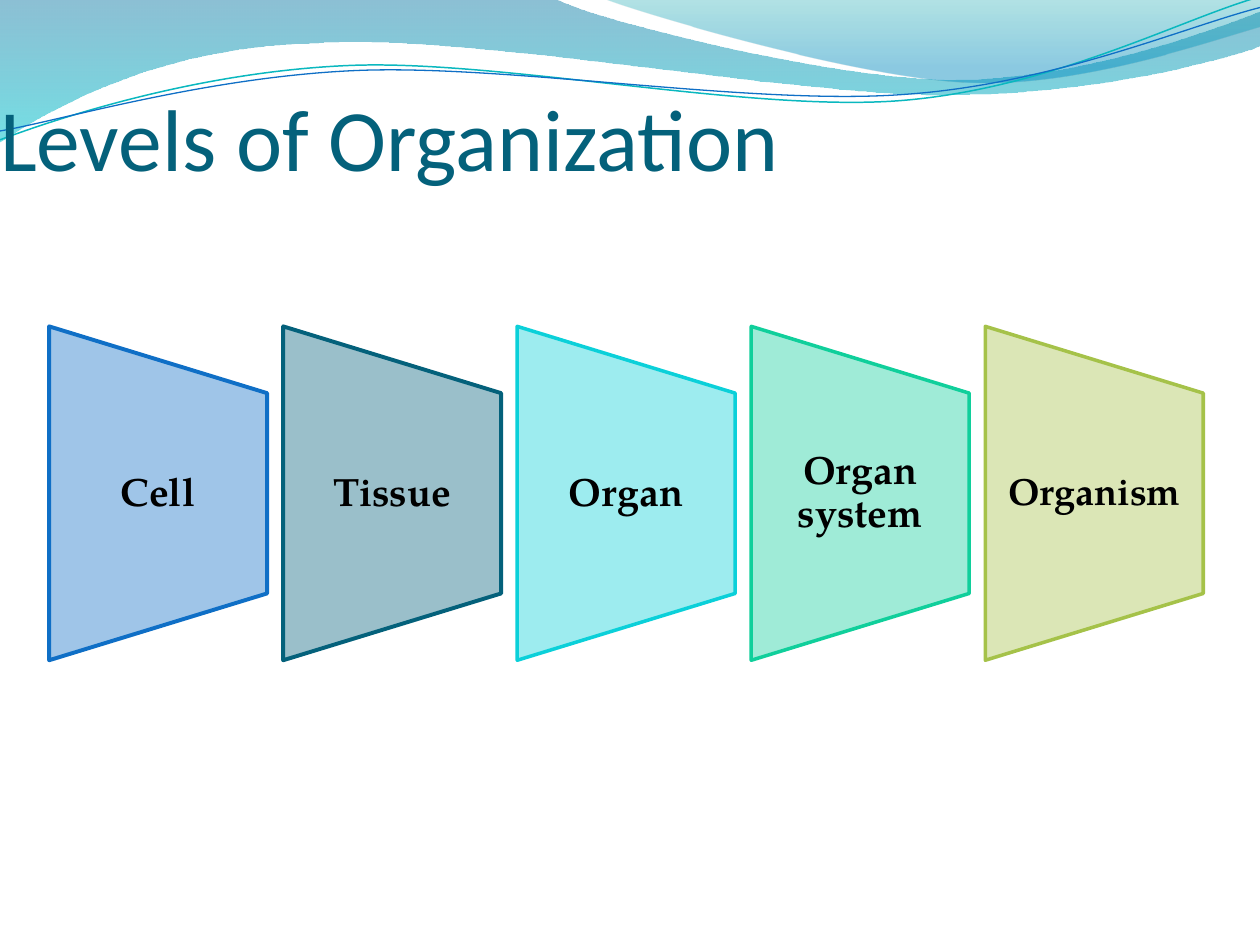
from math import cos, radians, sin

from lxml.etree import SubElement
from pptx import Presentation
from pptx.dml.color import RGBColor
from pptx.enum.text import MSO_ANCHOR, PP_ALIGN
from pptx.oxml.ns import qn
from pptx.util import Inches, Pt

BLACK = RGBColor(0x00, 0x00, 0x00)
BLUE = RGBColor(0x0F, 0x6F, 0xC6)
TEAL = RGBColor(0x04, 0x61, 0x7B)
CYAN = RGBColor(0x0B, 0xD0, 0xD9)
GREEN = RGBColor(0x10, 0xCF, 0x9B)
OLIVE = RGBColor(0xA5, 0xC2, 0x49)
LINE_TEAL = RGBColor(0x0A, 0xB8, 0xBF)
WAVE_BLUE = RGBColor(0x00, 0x74, 0xA1)
WAVE_CYAN = RGBColor(0x00, 0xC6, 0xCF)
CREST_TEAL = RGBColor(0x00, 0xA1, 0xA9)
CREST_BLUE = RGBColor(0x00, 0x8B, 0xBF)

STRAND_TILT = 357.3

MAIN_WAVE = [
    (0, 0), (4.4, -0.01),
    (4.76, 0.17, 6.64, 0.63, 7.58, 0.63),
    (8.53, 0.63, 9.58, 0.26, 10, 0.09),
    (10.01, 0.36),
    (9.83, 0.44, 8.7, 0.76, 7.46, 0.75),
    (6.22, 0.75, 3.82, 0.28, 2.57, 0.34),
    (1.29, 0.36, 0.46, 0.83, -0.01, 1.13),
]
CREST = [
    (4.79, -0.01),
    (5.09, 0.11, 6.82, 0.62, 7.69, 0.65),
    (8.56, 0.69, 9.61, 0.32, 10, 0.21),
    (10, 0),
]
TEAL_STRAND = [
    (0, 1.11),
    (0.48, 0.93, 1.58, 0.57, 2.77, 0.52),
    (3.95, 0.47, 5.93, 0.89, 7.13, 0.8),
    (8.33, 0.71, 9.38, 0.15, 9.98, -0.02),
]
BLUE_STRAND = [
    (0, 1.04),
    (0.47, 0.96, 1.64, 0.61, 2.83, 0.56),
    (4.03, 0.51, 5.97, 0.84, 7.17, 0.75),
    (8.36, 0.67, 9.41, 0.21, 10, 0.06),
]
LEVELS = [
    ("Cell", BLUE, 2.25, 22.5),
    ("Tissue", TEAL, 2.25, 22.5),
    ("Organ", CYAN, 2, 22.5),
    ("Organ system", GREEN, 2, 22.5),
    ("Organism", OLIVE, 2, 21.6),
]
LEVEL_LEFT, LEVEL_TOP = 0.39, 2.59
LEVEL_PITCH = (7.82 - LEVEL_LEFT) / (len(LEVELS) - 1)
LEVEL_WIDTH, LEVEL_HEIGHT, LEVEL_SLOPE = 1.73, 2.65, 0.53


def point_pairs(segment):
    return list(zip(segment[::2], segment[1::2]))


def level_out(outline, angle, center):
    cosine, sine = cos(radians(-angle)), sin(radians(-angle))
    center_x, center_y = center
    turned = []
    for segment in outline:
        offsets = [(x - center_x, y - center_y) for x, y in point_pairs(segment)]
        turned.append(tuple(value for x, y in offsets for value in (
            center_x + x * cosine - y * sine, center_y + x * sine + y * cosine)))
    return turned


def set_opacity(shape, *percentages):
    colors = shape.element.spPr.iter(qn("a:srgbClr"))
    for color, percentage in zip(colors, percentages):
        SubElement(color, qn("a:alpha"), val=str(percentage * 1000))


def write_text(shape, text, *, size, font, color, bold=False, align=PP_ALIGN.LEFT,
               anchor=MSO_ANCHOR.MIDDLE, margins=(0, 0, 0, 0), spacing=1.0):
    frame = shape.text_frame
    frame.word_wrap = True
    frame.vertical_anchor = anchor
    (frame.margin_left, frame.margin_top,
     frame.margin_right, frame.margin_bottom) = map(Inches, margins)
    paragraph = frame.paragraphs[0]
    paragraph.alignment = align
    paragraph.line_spacing = spacing
    run = paragraph.add_run()
    run.text = text
    run.font.size = Pt(size)
    run.font.name = font
    run.font.bold = bold
    run.font.color.rgb = color


class SlideBuilder:
    title_font = "Calibri"
    label_font = "TeX Gyre Pagella"

    def __init__(self, slide):
        self.slide = slide

    def outline(self, outline, close=True):
        anchors = [tuple(map(Inches, segment[-2:])) for segment in outline]
        builder = self.slide.shapes.build_freeform(*anchors[0])
        builder.add_line_segments(anchors[1:], close=close)
        shape = builder.convert_to_shape()
        shape.shadow.inherit = False
        lines = list(shape.element.spPr.iter(qn("a:lnTo")))
        for line, segment in zip(lines, outline[1:]):
            if len(segment) == 6:
                self.bend(shape, line, segment)
        return shape

    def bend(self, shape, line, segment):
        line.tag = qn("a:cubicBezTo")
        for point in list(line):
            line.remove(point)
        for x, y in point_pairs(segment):
            SubElement(line, qn("a:pt"), x=str(Inches(x) - shape.left),
                       y=str(Inches(y) - shape.top))

    def wave(self, outline, stops):
        shape = self.outline(outline)
        shape.fill.gradient()
        shape.fill.gradient_angle = 270
        for stop, (position, color, _) in zip(shape.fill.gradient_stops, stops):
            stop.position = position
            stop.color.rgb = color
        set_opacity(shape, *(opacity for _, _, opacity in stops))
        shape.line.fill.background()

    def strand(self, outline, center, color, width):
        shape = self.outline(level_out(outline, STRAND_TILT, center), close=False)
        shape.rotation = STRAND_TILT
        shape.fill.background()
        shape.line.color.rgb = color
        shape.line.width = Pt(width)

    def title(self, text):
        box = self.slide.shapes.add_textbox(0, 0, Inches(8.42), Inches(1.5))
        write_text(box, text, size=50, font=self.title_font, color=TEAL,
                   anchor=MSO_ANCHOR.BOTTOM, margins=(0, 0.05, 0, 0))

    def level(self, left, text, color, line_width, size):
        right, bottom = left + LEVEL_WIDTH, LEVEL_TOP + LEVEL_HEIGHT
        shape = self.outline([(left, bottom), (left, LEVEL_TOP),
                              (right, LEVEL_TOP + LEVEL_SLOPE), (right, bottom - LEVEL_SLOPE)])
        shape.fill.solid()
        shape.fill.fore_color.rgb = color
        set_opacity(shape, 40)
        shape.line.color.rgb = color
        shape.line.width = Pt(line_width)
        write_text(shape, text, size=size, font=self.label_font, color=BLACK, bold=True,
                   align=PP_ALIGN.CENTER, margins=(0.16, 0.53, 0.16, 0.53), spacing=0.9)


def main():
    presentation = Presentation()
    presentation.slide_width = Inches(10)
    presentation.slide_height = Inches(7.5)
    builder = SlideBuilder(presentation.slides.add_slide(presentation.slide_layouts[6]))
    builder.wave(MAIN_WAVE, [(0, WAVE_BLUE, 45), (1, WAVE_CYAN, 55)])
    builder.wave(CREST, [(0, CREST_TEAL, 30), (0.8, CREST_BLUE, 45)])
    builder.strand(TEAL_STRAND, (4.99, 0.57), LINE_TEAL, 0.85)
    builder.strand(BLUE_STRAND, (5, 0.59), BLUE, 0.75)
    builder.title("Levels of Organization")
    for index, level in enumerate(LEVELS):
        builder.level(LEVEL_LEFT + index * LEVEL_PITCH, *level)
    presentation.save("out.pptx")


if __name__ == "__main__":
    main()
